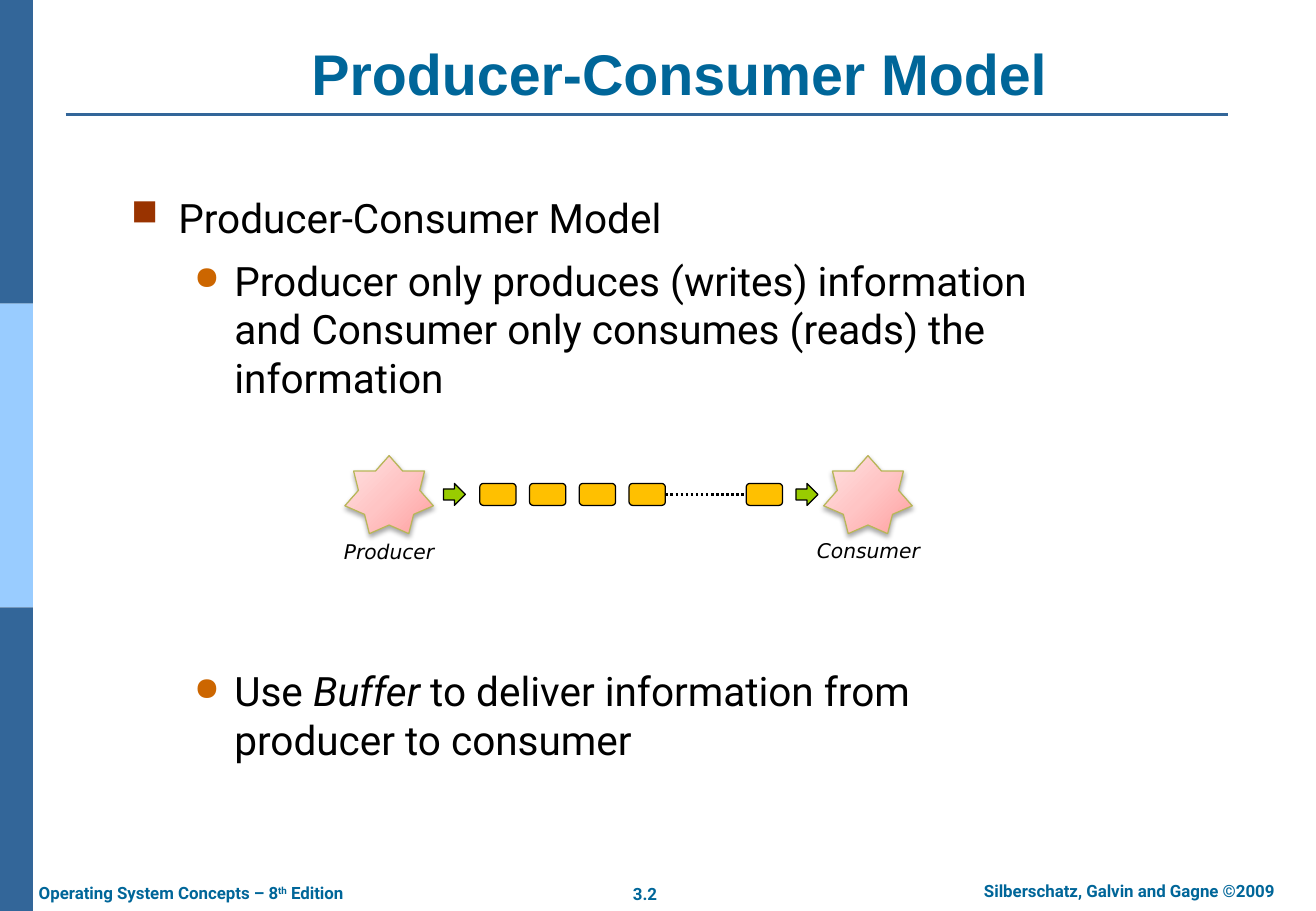
from dataclasses import dataclass

from lxml.etree import SubElement
from pptx import Presentation
from pptx.dml.color import RGBColor
from pptx.enum.dml import MSO_LINE
from pptx.enum.shapes import MSO_CONNECTOR, MSO_SHAPE
from pptx.enum.text import MSO_ANCHOR, PP_ALIGN
from pptx.oxml.ns import qn
from pptx.util import Cm, Pt


@dataclass(frozen=True)
class Theme:
    navy: str = "336699"
    sky: str = "99CCFF"
    teal: str = "006699"
    black: str = "000000"
    square: str = "993300"
    dot: str = "CC6600"
    slot: str = "FFC000"
    arrow: str = "99CC00"
    star_line: str = "B7B758"
    star_stops: tuple = ((0, "FFA0A0"), (50, "FFC5C5"), (100, "FFE3E3"))
    title_font: str = "Arial"
    body_font: str = "Roboto"
    label_font: str = "DejaVu Sans"
    title_size: int = 34
    body_size: int = 24
    label_size: int = 12
    footer_size: int = 10


THEME = Theme()


def add_xml(parent, tag, **attributes):
    return SubElement(parent, qn(tag), attributes)


def style_font(font, name, size, color, bold=False, italic=None):
    font.name = name
    font.size = Pt(size)
    font.bold = bold
    font.italic = italic
    font.color.rgb = RGBColor.from_string(color)


def add_box(page, left, top, width, height, wrap=True):
    box = page.shapes.add_textbox(Cm(left), Cm(top), Cm(width), Cm(height))
    box.text_frame.word_wrap = wrap
    return box.text_frame


def add_title(page, text):
    frame = add_box(page, 2.26, 0.76, 23.88, 1.6)
    frame.vertical_anchor = MSO_ANCHOR.BOTTOM
    para = frame.paragraphs[0]
    para.text = text
    para.alignment = PP_ALIGN.CENTER
    style_font(para.font, THEME.title_font, THEME.title_size, THEME.teal, bold=True)


def add_footer(page, left, top, width, texts, alignment=PP_ALIGN.CENTER):
    para = add_box(page, left, top, width, 0.71).paragraphs[0]
    para.alignment = alignment
    spans = []
    for text in texts:
        span = para.add_run()
        span.text = text
        spans.append(span)
    style_font(para.font, THEME.body_font, THEME.footer_size, THEME.teal, bold=True)
    return spans


def add_label(page, left, top, width, text):
    para = add_box(page, left, top, width, 0.76, wrap=False).paragraphs[0]
    para.text = text
    para.alignment = PP_ALIGN.CENTER
    style_font(para.font, THEME.label_font, THEME.label_size, THEME.black, italic=True)


def add_bullet(para, level, before):
    char, color, percent, margin, hanging = (
        ("■", THEME.square, 90, 0.99, 0.99),
        ("●", THEME.dot, 80, 2.16, 0.84),
    )[level]
    para.level = level
    if before:
        para.space_before = Pt(before)
    properties = para._p.get_or_add_pPr()
    properties.set("marL", str(Cm(margin)))
    properties.set("indent", str(-Cm(hanging)))
    add_xml(add_xml(properties, "a:buClr"), "a:srgbClr", val=color)
    add_xml(properties, "a:buSzPct", val=str(percent * 1000))
    add_xml(properties, "a:buChar", char=char)


def add_body(page, items):
    frame = add_box(page, 2.49, 3.91, 20.07, 12.5)
    for index, (level, before, texts) in enumerate(items):
        para = frame.add_paragraph() if index else frame.paragraphs[0]
        add_bullet(para, level, before)
        for text, italic in texts:
            span = para.add_run()
            span.text = text
            if italic:
                span.font.italic = True
        style_font(para.font, THEME.body_font, THEME.body_size, THEME.black)


def add_block(page, kind, left, top, width, height, fill, line=None):
    shape = page.shapes.add_shape(kind, Cm(left), Cm(top), Cm(width), Cm(height))
    shape.shadow.inherit = False
    shape.fill.solid()
    shape.fill.fore_color.rgb = RGBColor.from_string(fill)
    if line:
        shape.line.color.rgb = RGBColor.from_string(line)
        shape.line.width = Pt(0.75)
    else:
        shape.line.fill.background()
    return shape


def add_star(page, left):
    star = add_block(page, MSO_SHAPE.STAR_7_POINT, left, 9.53, 1.85, 1.63,
                     THEME.star_stops[0][1], THEME.star_line)
    star.fill.gradient()
    star.fill.gradient_angle = 135
    properties = star._element.spPr
    stops = properties.find(qn("a:gradFill")).find(qn("a:gsLst"))
    for stop in list(stops):
        stops.remove(stop)
    for position, color in THEME.star_stops:
        stop = add_xml(stops, "a:gs", pos=str(position * 1000))
        add_xml(stop, "a:srgbClr", val=color)
    shadow = add_xml(properties.find(qn("a:effectLst")), "a:outerShdw",
                     blurRad=str(Pt(3.1)), dist=str(Pt(1.8)), dir="5400000", rotWithShape="0")
    add_xml(add_xml(shadow, "a:srgbClr", val=THEME.black), "a:alpha", val="35000")


def add_line(page, left, right, y, color):
    line = page.shapes.add_connector(MSO_CONNECTOR.STRAIGHT, Cm(left), Cm(y), Cm(right), Cm(y))
    line.line.color.rgb = RGBColor.from_string(color)
    line.line.width = Pt(1.5)
    add_xml(line._element.spPr, "a:effectLst")
    return line


def add_buffer(page):
    top, height = 10.11, 0.46
    for left in (7.21, 17.22):
        add_star(page, left)
    for left in (9.27, 16.64):
        add_block(page, MSO_SHAPE.RIGHT_ARROW, left, top, 0.46, height, THEME.arrow, THEME.black)
    lefts = [10.03 + 1.04 * index for index in range(4)] + [15.6]
    slots = [
        add_block(page, MSO_SHAPE.ROUNDED_RECTANGLE, left, top, 0.76, height,
                  THEME.slot, THEME.black)
        for left in lefts
    ]
    gap = add_line(page, 13.91, 15.6, top + height / 2, THEME.black)
    gap.line.dash_style = MSO_LINE.ROUND_DOT
    gap.begin_connect(slots[-2], 3)
    gap.end_connect(slots[-1], 1)
    add_label(page, 6.93, 11.15, 2.41, "Producer")
    add_label(page, 16.81, 11.13, 2.69, "Consumer")


def main():
    deck = Presentation()
    deck.slide_width, deck.slide_height = Cm(27.51), Cm(19.05)
    page = deck.slides.add_slide(deck.slide_layouts[6])

    for index, color in enumerate((THEME.navy, THEME.sky, THEME.navy)):
        add_block(page, MSO_SHAPE.RECTANGLE, 0, 6.35 * index, 0.69, 6.35, color)
    add_line(page, 1.37, 25.68, 2.39, THEME.navy)
    add_footer(page, 12.85, 18.36, 1.27, ["3.2"])
    add_footer(page, 19.53, 18.29, 8.15, ["Silberschatz, Galvin and Gagne ©2009"])
    edition = add_footer(page, 0.56, 18.34, 7.39,
                         ["Operating System Concepts – 8", "th", " Edition"], PP_ALIGN.LEFT)
    edition[1]._r.get_or_add_rPr().set("baseline", "30000")

    add_title(page, "Producer-Consumer Model")
    add_body(page, [
        (0, 0, [("Producer-Consumer Model", False)]),
        (1, 8.4, [("Producer only produces (writes) information and Consumer only "
                   "consumes (reads) the information", False)]),
        (1, 157, [("Use ", False), ("Buffer", True),
                  (" to deliver information from producer to consumer", False)]),
    ])
    add_buffer(page)
    deck.save("out.pptx")


if __name__ == "__main__":
    main()
